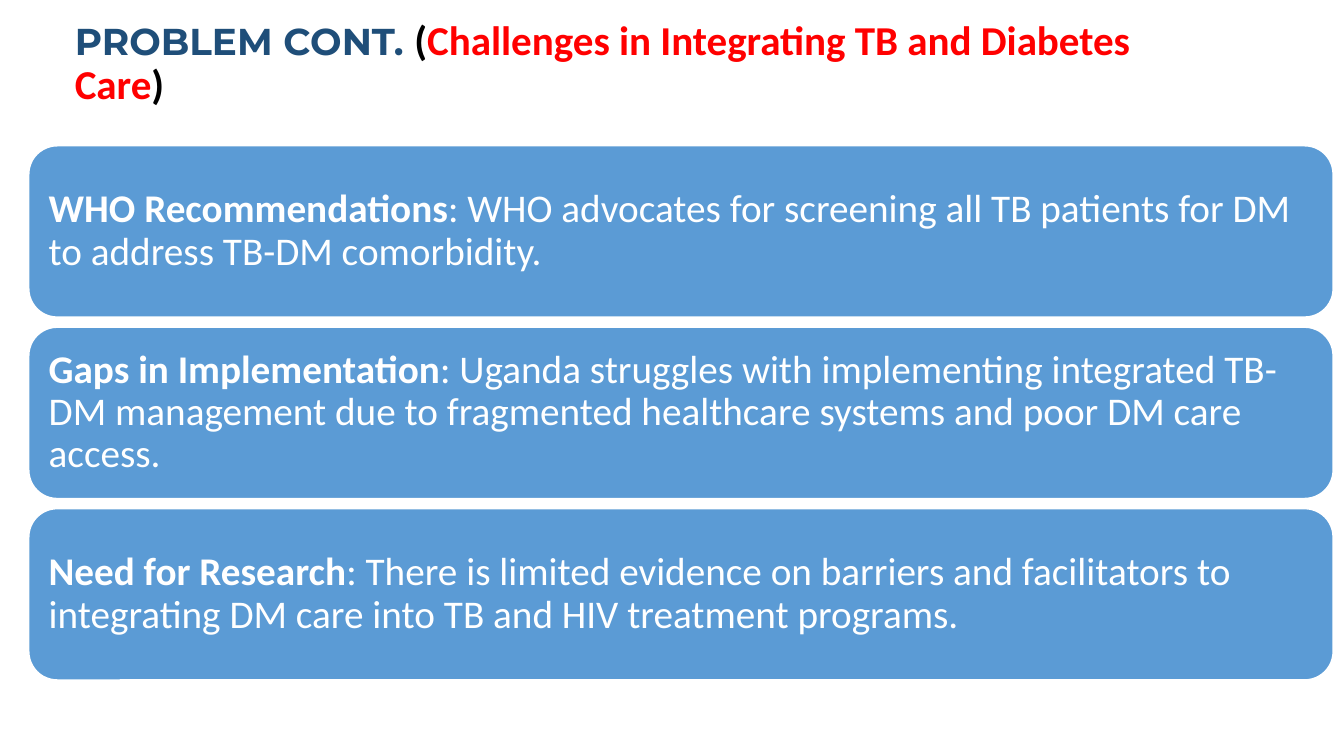
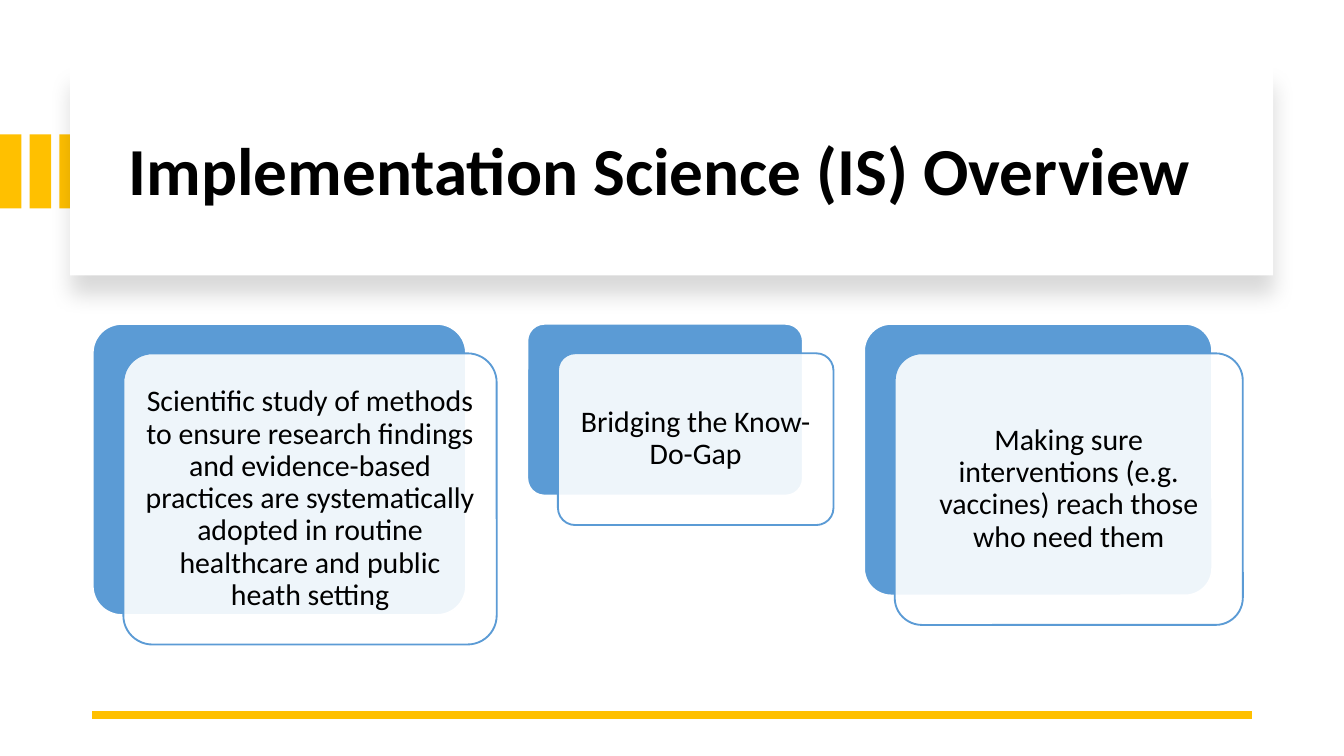
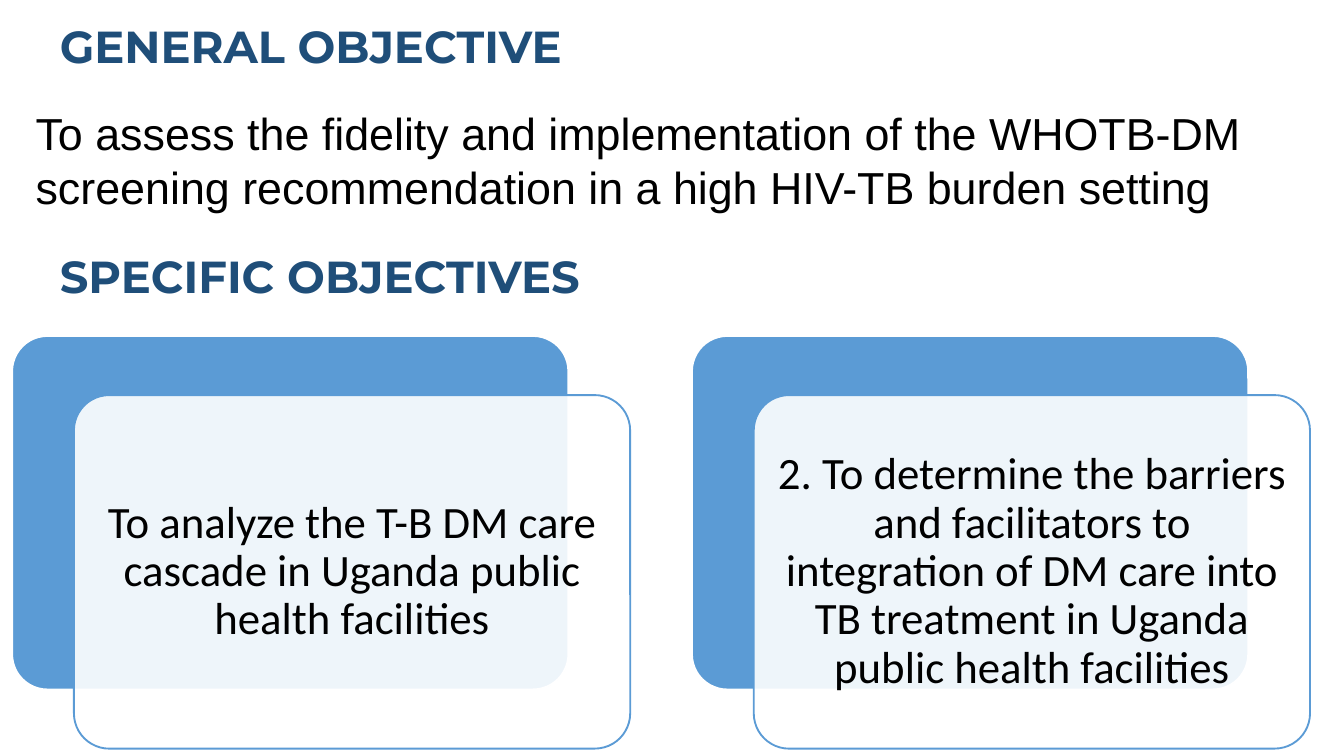
import pptx
import pptx.util
import pptx.oxml
import pptx.oxml.ns
import pptx.dml.color
import pptx.enum.shapes
import pptx.enum.text
from lxml import etree

Pt = pptx.util.Pt
RGBColor = pptx.dml.color.RGBColor
MSO_SHAPE = pptx.enum.shapes.MSO_SHAPE
PP_ALIGN = pptx.enum.text.PP_ALIGN
MSO_ANCHOR = pptx.enum.text.MSO_ANCHOR
qn = pptx.oxml.ns.qn

NAVY = RGBColor(0x1F, 0x4E, 0x79)
BLUE = RGBColor(0x5B, 0x9B, 0xD5)
GOLD = RGBColor(0xFF, 0xC0, 0x00)
RED = RGBColor(0xFF, 0x00, 0x00)
BLACK = RGBColor(0x00, 0x00, 0x00)
WHITE = RGBColor(0xFF, 0xFF, 0xFF)

HEADING = {"name": "Montserrat", "size": Pt(24), "bold": True, "color": NAVY}
BODY = {"name": "Calibri", "size": Pt(16), "bold": False, "color": BLACK}


def add_box(slide, kind, at, fill, line=None):
    box = slide.shapes.add_shape(kind, *[Pt(length) for length in at])
    box.shadow.inherit = False
    box.fill.solid()
    box.fill.fore_color.rgb = fill
    if line is None:
        box.line.fill.background()
    else:
        box.line.color.rgb = line
        box.line.width = Pt(1)
    return box


def add_text(slide, at, runs, margin=None, align=PP_ALIGN.LEFT,
             anchor=MSO_ANCHOR.MIDDLE, spacing=0.9):
    """Add one paragraph made of (text, font values) runs."""
    frame = slide.shapes.add_textbox(*[Pt(length) for length in at]).text_frame
    frame.word_wrap = True
    frame.vertical_anchor = anchor
    if margin is not None:
        for side in ("left", "top", "right", "bottom"):
            setattr(frame, f"margin_{side}", Pt(margin))
    paragraph = frame.paragraphs[0]
    paragraph.alignment = align
    paragraph.line_spacing = spacing
    for text, values in runs:
        run = paragraph.add_run()
        run.text = text
        for key, value in values.items():
            if key == "color":
                run.font.color.rgb = value
            else:
                setattr(run.font, key, value)


prs = pptx.Presentation()
prs.slide_width, prs.slide_height = Pt(720), Pt(405)
problem, overview, objectives = [
    prs.slides.add_slide(prs.slide_layouts[6]) for _ in range(3)]

# Slide 1: challenges
challenge = BODY | {"size": Pt(22), "bold": True}
add_text(problem, (33, 8, 621, 53), [
    ("PROBLEM CONT. ", HEADING | {"size": Pt(20)}),
    ("(", challenge),
    ("Challenges in Integrating TB and Diabetes Care", challenge | {"color": RED}),
    (")", challenge)])

points = [
    ("WHO Recommendations",
     ": WHO advocates for screening all TB patients for DM to address TB-DM comorbidity."),
    ("Gaps in Implementation",
     ": Uganda struggles with implementing integrated TB-DM management due to "
     "fragmented healthcare systems and poor DM care access."),
    ("Need for Research",
     ": There is limited evidence on barriers and facilitators to integrating DM care "
     "into TB and HIV treatment programs."),
]
point_font = BODY | {"size": Pt(21), "color": WHITE}
for row, (lead, detail) in enumerate(points):
    top = 78 + row * 97.2
    add_box(problem, MSO_SHAPE.ROUNDED_RECTANGLE, (15.3, top, 699, 92), BLUE, WHITE)
    add_text(problem, (19.8, top + 4.5, 690, 83),
             [(lead, point_font | {"bold": True}), (detail, point_font)], margin=6.3)

# Slide 2: title panel with gold accents
for bar in range(3):
    add_box(overview, MSO_SHAPE.RECTANGLE, (bar * 15.9, 72, 11.5, 39.6), GOLD)
panel = add_box(overview, MSO_SHAPE.RECTANGLE, (37.5, 36, 644.5, 111.6), WHITE)
shadow = etree.SubElement(
    panel.element.spPr.find(qn("a:effectLst")), qn("a:outerShdw"),
    blurRad=str(Pt(11)), dist=str(Pt(10)), dir="5400000", algn="t", rotWithShape="0")
shade = etree.SubElement(shadow, qn("a:srgbClr"), val=str(BLACK))
etree.SubElement(shade, qn("a:alpha"), val="15000")
add_text(overview, (62, 47.5, 600.5, 91.5),
         [("Implementation Science (IS) Overview", BODY | {"size": Pt(36), "bold": True})])

footer = overview.shapes.add_connector(
    pptx.enum.shapes.MSO_CONNECTOR.STRAIGHT, Pt(670.5), Pt(383), Pt(49.5), Pt(383))
footer.line.color.rgb = GOLD
footer.line.width = Pt(4.5)
etree.SubElement(footer.element.spPr, qn("a:effectLst"))

# Slide 3: objectives
for at, text in [((25, 6.5, 405, 52), "GENERAL OBJECTIVE"),
                 ((25, 129.6, 376, 36), "SPECIFIC OBJECTIVES")]:
    add_text(objectives, at, [(text, HEADING)], anchor=MSO_ANCHOR.TOP, spacing=1.0)
add_text(objectives, (12, 53.3, 720, 82),
         [("To assess the fidelity and implementation of the WHOTB-DM screening "
           "recommendation in a high HIV-TB burden setting",
           BODY | {"name": "Arial", "size": Pt(24)})],
         anchor=MSO_ANCHOR.TOP, spacing=1.0)

# Slides 2 and 3: rows of layered cards, each spaced two offsets from the last
card_rows = [
    (overview, 49.7, 173.5, 16.4, 15.8, 16, 5, [
        (200, 156, "Scientific study of methods to ensure research findings and "
                   "evidence-based practices are systematically adopted in routine "
                   "healthcare and public heath setting"),
        (147.6, 92, "Bridging the Know-Do-Gap"),
        (186.5, 145.5, "Making sure interventions (e.g. vaccines) reach those who need them"),
    ]),
    (objectives, 6.5, 180, 33.1, 31.7, 24, 7.2, [
        (298, 189.4, "To analyze the T-B DM care cascade in Uganda public health facilities"),
        (298, 189.4, "2. To determine the barriers and facilitators to integration of DM care "
                     "into TB treatment in Uganda public health facilities"),
    ]),
]
for slide, left, top, shift_x, shift_y, size, margin, cards in card_rows:
    for width, height, text in cards:
        front_left, front_top = left + shift_x, top + shift_y
        back = add_box(slide, MSO_SHAPE.ROUNDED_RECTANGLE,
                       (left, top, width, height), BLUE, WHITE)
        front = add_box(slide, MSO_SHAPE.ROUNDED_RECTANGLE,
                        (front_left, front_top, width, height), WHITE, BLUE)
        back.adjustments[0] = front.adjustments[0] = 0.1
        tint = front.element.spPr.find(qn("a:solidFill"))[0]
        etree.SubElement(tint, qn("a:alpha"), val="90000")
        inset = 0.03 * height
        add_text(slide, (front_left + inset, front_top + inset,
                         width - 2 * inset, height - 2 * inset),
                 [(text, BODY | {"size": Pt(size)})], margin, PP_ALIGN.CENTER)
        left += width + 2 * shift_x

prs.save("out.pptx")
